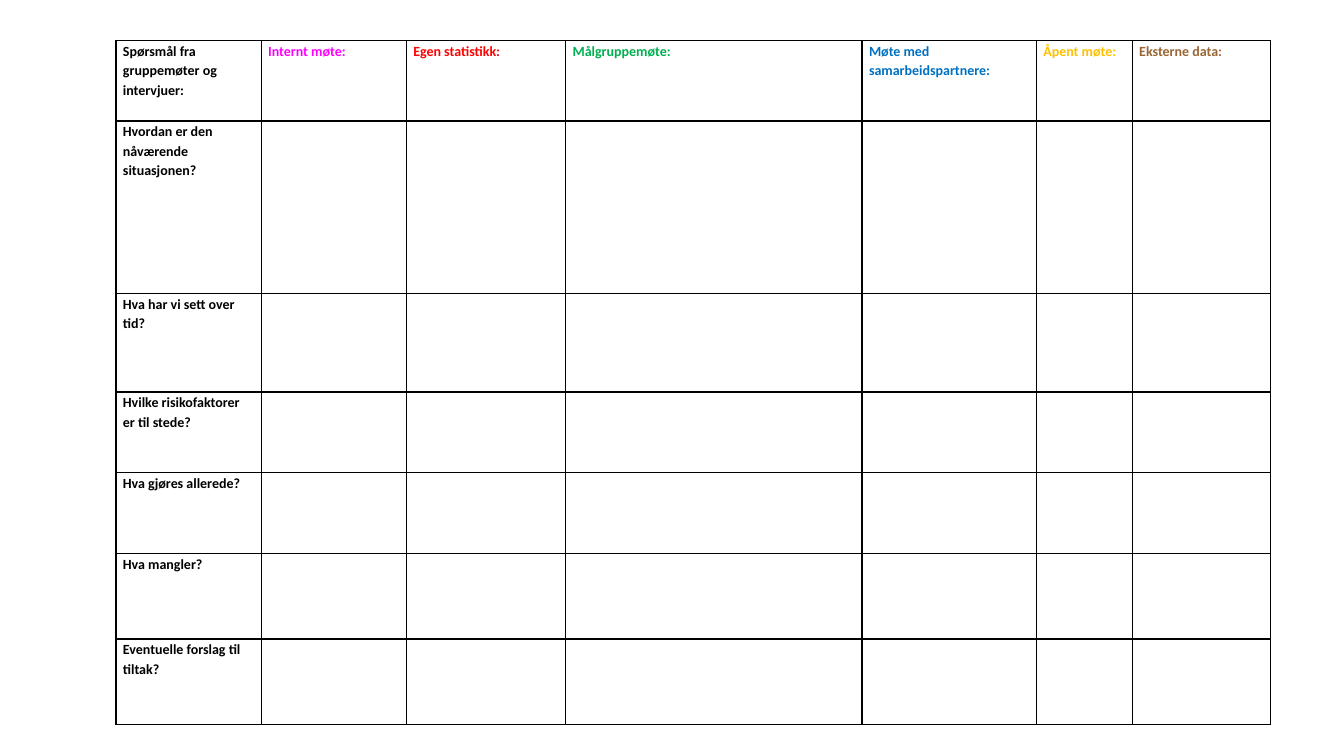
from lxml import etree
from pptx import Presentation
from pptx.dml.color import RGBColor
from pptx.oxml import ns
from pptx.util import Inches, Pt

BLACK = RGBColor(0x00, 0x00, 0x00)
MAGENTA = RGBColor(0xFF, 0x00, 0xFF)
RED = RGBColor(0xFF, 0x00, 0x00)
GREEN = RGBColor(0x00, 0xB0, 0x50)
BLUE = RGBColor(0x00, 0x70, 0xC0)
AMBER = RGBColor(0xFF, 0xC0, 0x00)
BROWN = RGBColor(0x99, 0x66, 0x33)

COLUMNS = [
    ("Spørsmål fra gruppemøter og intervjuer:", BLACK, 1.44),
    ("Internt møte:", MAGENTA, 1.44),
    ("Egen statistikk:", RED, 1.58),
    ("Målgruppemøte:", GREEN, 2.94),
    ("Møte med samarbeidspartnere:", BLUE, 1.73),
    ("Åpent møte:", AMBER, 0.95),
    ("Eksterne data:", BROWN, 1.37),
]
QUESTIONS = [
    ("Hvordan er den nåværende situasjonen?", 1.71),
    ("Hva har vi sett over tid?", 0.98),
    ("Hvilke risikofaktorer er til stede?", 0.8),
    ("Hva gjøres allerede?", 0.8),
    ("Hva mangler?", 0.85),
    ("Eventuelle forslag til tiltak?", 0.85),
]
HEADER_HEIGHT = 0.8


def add_borders(cell):
    tcPr = cell._tc.get_or_add_tcPr()
    for side in ("lnL", "lnR", "lnT", "lnB"):
        ln = etree.SubElement(tcPr, ns.qn(f"a:{side}"), w=str(Pt(1)))
        fill = etree.SubElement(ln, ns.qn("a:solidFill"))
        etree.SubElement(fill, ns.qn("a:srgbClr"), val=str(BLACK))


def write_cell(cell, label, color):
    p = cell.text_frame.paragraphs[0]
    p.text = label
    p.line_spacing = 1.15
    p.space_after = Pt(8)
    font = p.runs[0].font
    font.name = "Calibri"
    font.size = Pt(10)
    font.bold = True
    font.color.rgb = color


prs = Presentation()
prs.slide_width = Inches(13.33)
prs.slide_height = Inches(7.5)
s = prs.slides.add_slide(prs.slide_layouts[6])

heights = [HEADER_HEIGHT] + [height for _, height in QUESTIONS]
widths = [width for _, _, width in COLUMNS]
table = s.shapes.add_table(
    len(heights), len(widths), Inches(1.15), Inches(0.4),
    Inches(sum(widths)), Inches(sum(heights))).table
table.first_row = False
table.horz_banding = False
for column, width in zip(table.columns, widths):
    column.width = Inches(width)
for row, height in zip(table.rows, heights):
    row.height = Inches(height)

for cell in table.iter_cells():
    cell.margin_left = cell.margin_right = Inches(0.07)
    cell.margin_top = cell.margin_bottom = 0
    add_borders(cell)
    cell.fill.background()

for c, (label, color, _) in enumerate(COLUMNS):
    write_cell(table.cell(0, c), label, color)
for r, (question, _) in enumerate(QUESTIONS, start=1):
    write_cell(table.cell(r, 0), question, BLACK)

prs.save("out.pptx")
